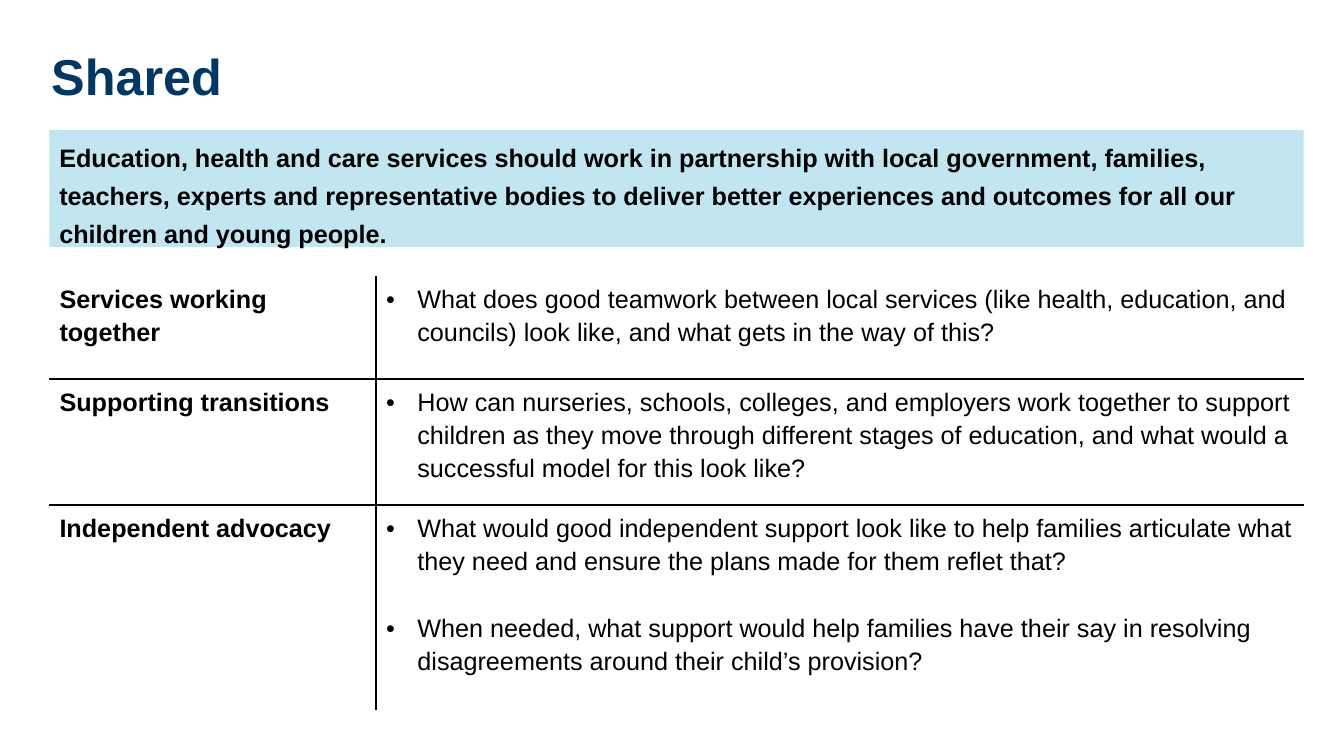
from lxml import etree
from pptx import Presentation
from pptx.dml.color import RGBColor
from pptx.enum.shapes import MSO_SHAPE
from pptx.enum.text import MSO_ANCHOR
from pptx.oxml import parse_xml
from pptx.util import Inches, Pt

RECTANGLE = MSO_SHAPE.RECTANGLE
TOP = MSO_ANCHOR.TOP
MIDDLE = MSO_ANCHOR.MIDDLE
NAVY = RGBColor(0x00, 0x37, 0x64)
PALE_BLUE = RGBColor(0xC2, 0xE5, 0xF2)
BLACK = RGBColor(0, 0, 0)
NAMESPACE = "http://schemas.openxmlformats.org/drawingml/2006/main"
FONT = "Arial"
BULLET_INDENT = Inches(0.31)
BORDER_WIDTH = Pt(1.5)
COLUMN_WIDTHS = (3.24, 9.2)
ROW_HEIGHTS = (1.02, 1.25, 2.03)

STATEMENT = (
    "Education, health and care services should work in partnership with local "
    "government, families, teachers, experts and representative bodies to deliver "
    "better experiences and outcomes for all our children and young people."
)
THEMES = [
    ("Services working together", [
        "What does good teamwork between local services (like health, education, "
        "and councils) look like, and what gets in the way of this?",
    ]),
    ("Supporting transitions", [
        "How can nurseries, schools, colleges, and employers work together to "
        "support children as they move through different stages of education, "
        "and what would a successful model for this look like?",
    ]),
    ("Independent advocacy", [
        "What would good independent support look like to help families "
        "articulate what they need and ensure the plans made for them reflet that?",
        "When needed, what support would help families have their say in "
        "resolving disagreements around their child’s provision?",
    ]),
]


def write_text(frame, texts, size=18, color=BLACK, bold=False, spacing=1.0,
               gap=0, bullet=False):
    """Fill a text frame with one formatted paragraph per text."""
    frame.word_wrap = True
    for index, text in enumerate(texts):
        paragraph = frame.paragraphs[0] if index == 0 else frame.add_paragraph()
        paragraph.line_spacing = spacing
        if index:
            paragraph.space_before = Pt(gap)
        if bullet:
            properties = paragraph._p.get_or_add_pPr()
            properties.set("marL", str(BULLET_INDENT))
            properties.set("indent", str(-BULLET_INDENT))
            font = etree.SubElement(properties, f"{{{NAMESPACE}}}buFont")
            font.set("typeface", FONT)
            mark = etree.SubElement(properties, f"{{{NAMESPACE}}}buChar")
            mark.set("char", "•")
        run = paragraph.add_run()
        run.text = text
        run.font.name = FONT
        run.font.size = Pt(size)
        run.font.bold = bold
        run.font.color.rgb = color


def set_borders(cell, visible_sides):
    """Draw the named sides (L, R, T, B) of a cell and clear the others."""
    properties = cell._tc.get_or_add_tcPr()
    for index, side in enumerate("LRTB"):
        paint = "<a:noFill/>"
        if side in visible_sides:
            paint = f'<a:solidFill><a:srgbClr val="{BLACK}"/></a:solidFill>'
        line = parse_xml(f'<a:ln{side} xmlns:a="{NAMESPACE}" w="{BORDER_WIDTH}">'
                         f'{paint}</a:ln{side}>')
        properties.insert(index, line)


def add_title(slide, left, top, width, height):
    """Place the slide heading."""
    box = slide.shapes.add_textbox(left, top, width, height)
    box.text_frame.vertical_anchor = MIDDLE
    write_text(box.text_frame, ["Shared"], size=36, color=NAVY, bold=True)


def add_statement(slide, left, top, width, height):
    """Place the tinted band with the guiding statement."""
    band = slide.shapes.add_shape(RECTANGLE, left, top, width, height)
    band.shadow.inherit = False
    band.fill.solid()
    band.fill.fore_color.rgb = PALE_BLUE
    band.line.fill.background()
    band.text_frame.vertical_anchor = TOP
    write_text(band.text_frame, [STATEMENT], bold=True, spacing=1.25)
    band.text_frame.paragraphs[0].alignment = 1


def add_themes(slide, left, top, width, height):
    """Place the table of themes and their questions."""
    frame = slide.shapes.add_table(len(THEMES), 2, left, top, width, height)
    table = frame.table
    table.first_row = False
    table.horz_banding = False
    for column, column_width in zip(table.columns, COLUMN_WIDTHS):
        column.width = Inches(column_width)
    for row, row_height in zip(table.rows, ROW_HEIGHTS):
        row.height = Inches(row_height)
    for row, (theme, questions) in enumerate(THEMES):
        inner_sides = ("T" if row else "") + ("B" if row < len(THEMES) - 1 else "")
        name_cell, question_cell = table.cell(row, 0), table.cell(row, 1)
        write_text(name_cell.text_frame, [theme], bold=True, spacing=1.17)
        write_text(question_cell.text_frame, questions, spacing=1.17, gap=24,
                   bullet=True)
        for cell, side in ((name_cell, "R"), (question_cell, "L")):
            cell.fill.background()
            set_borders(cell, inner_sides + side)


def main():
    """Build and save the slide."""
    presentation = Presentation()
    presentation.slide_width = Inches(13.33)
    presentation.slide_height = Inches(7.5)
    slide = presentation.slides.add_slide(presentation.slide_layouts[6])
    add_title(slide, Inches(0.41), Inches(0.39), Inches(12.52), Inches(0.71))
    add_statement(slide, Inches(0.49), Inches(1.29), Inches(12.44), Inches(1.16))
    add_themes(slide, Inches(0.49), Inches(2.74), Inches(12.44), Inches(4.3))
    presentation.save("out.pptx")


if __name__ == "__main__":
    main()
